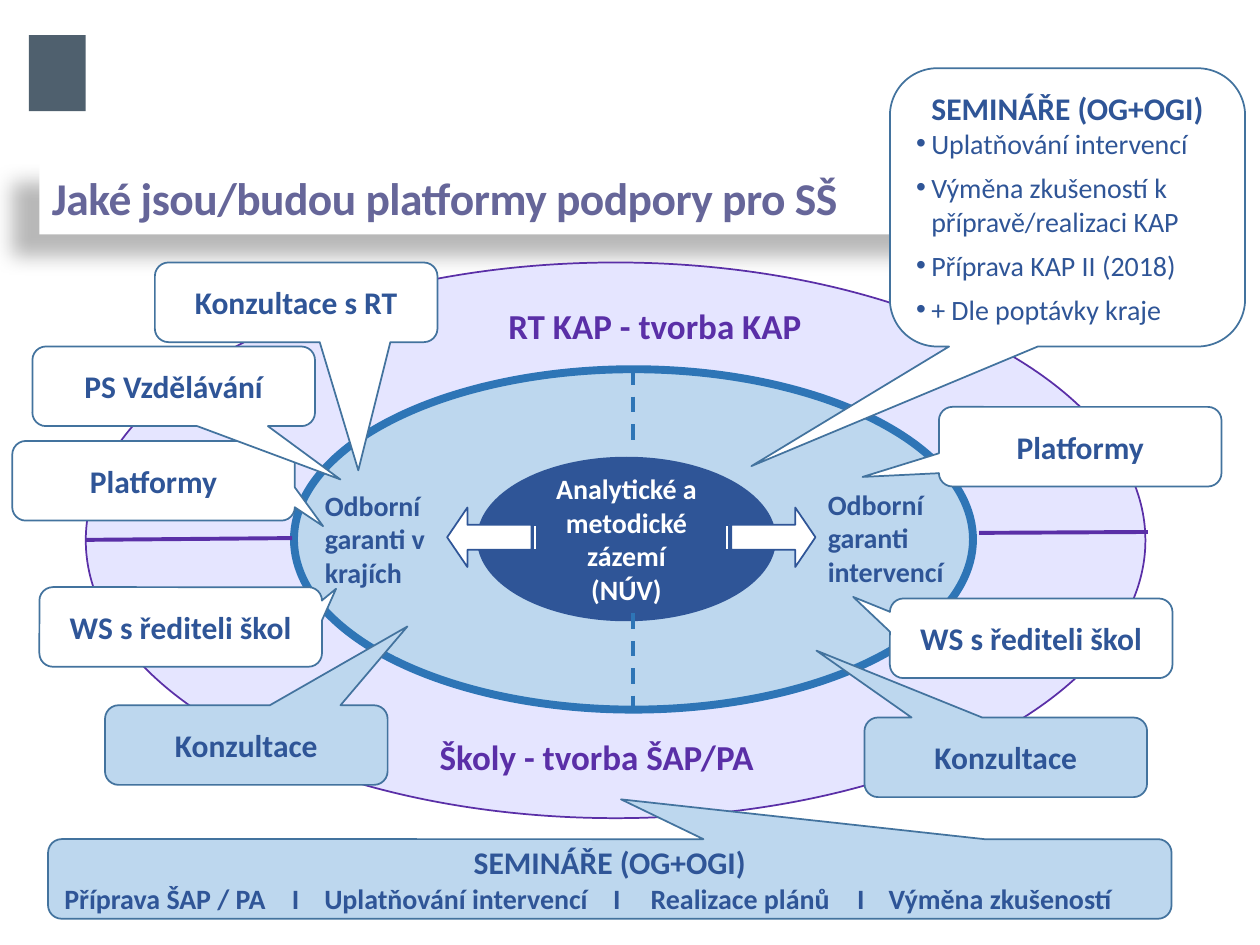
from lxml.etree import SubElement
from pptx import Presentation
from pptx.dml.color import RGBColor
from pptx.enum.dml import MSO_LINE
from pptx.enum.shapes import MSO_CONNECTOR, MSO_SHAPE
from pptx.enum.text import MSO_ANCHOR, MSO_AUTO_SIZE, PP_ALIGN
from pptx.oxml.ns import qn
from pptx.util import Pt

COLORS = {
    "white": "FFFFFF",
    "title": "666699",
    "logo": "4F606E",
    "lavender": "E5E5FF",
    "violet": "5A2FA7",
    "sky": "BDD7EE",
    "ring": "2E75B6",
    "navy": "2F5597",
    "border": "43739E",
    "shadow": "000000",
}
FONT = "Calibri"
CALLOUT_SIZE = (161.5, 45.5)
CALLOUTS = [
    ("WS s řediteli škol", 22.5, 335.5, 0.55, -0.48, "white"),
    ("Konzultace", 60, 403, 0.57, -1.49, "sky"),
    ("WS s řediteli škol", 508.5, 342, -0.63, -0.52, "white"),
    ("Konzultace", 494, 410, -0.67, -1.34, "sky"),
    ("Platformy", 7, 252, 0.6, 0.57, "white"),
    ("Platformy", 536.5, 232.5, -0.77, 0.38, "white"),
    ("PS Vzdělávání", 18.5, 198, 0.59, 1.17, "white"),
    ("Konzultace s RT", 88.5, 150, 0.22, 2.11, "white"),
]
LABELS = [
    ("Odborní garanti v krajích", (178.5, 275.5, 85, 65.5), 16, "navy", PP_ALIGN.LEFT),
    ("Odborní garanti intervencí", (466, 275, 85, 65.5), 16, "navy", PP_ALIGN.LEFT),
    ("RT KAP - tvorba KAP", (280, 170.5, 188.5, 31.5), 20, "violet", PP_ALIGN.CENTER),
    ("Školy - tvorba ŠAP/PA", (239, 417, 204, 31.5), 20, "violet", PP_ALIGN.CENTER),
]
LINES = [
    ((361.5, 211), (361.5, 256.5), "ring", MSO_LINE.DASH),
    ((361.5, 350.5), (361.5, 405.5), "ring", MSO_LINE.DASH),
    ((49, 308.5), (167, 307.5), "violet", None),
    ((559.5, 304.5), (656, 304), "violet", None),
]
SEMINAR_TITLE = "SEMINÁŘE (OG+OGI)"
SEMINAR_TOPICS = [
    "Uplatňování intervencí",
    "Výměna zkušeností k přípravě/realizaci KAP",
    "Příprava KAP II (2018)",
    "+ Dle poptávky kraje",
]
SCHOOL_TOPICS = [
    "Příprava ŠAP / PA",
    "Uplatňování intervencí",
    "Realizace plánů",
    "Výměna zkušeností",
]
SCHOOL_TABS = [130, 148.5, 313.5, 335, 453, 471]


def color(name):
    return RGBColor.from_string(COLORS[name])


def lengths(values):
    return [Pt(value) for value in values]


def format_text(para, size, color_name, align, bold=True):
    para.alignment = align
    for span in para.runs:
        span.font.name = FONT
        span.font.size = Pt(size)
        span.font.bold = bold
        span.font.color.rgb = color(color_name)


def write(box, text, size, color_name, align=PP_ALIGN.CENTER):
    frame = box.text_frame
    frame.word_wrap = True
    frame.text = text
    for para in frame.paragraphs:
        format_text(para, size, color_name, align)


def add_box(page, kind, bounds, fill, line=None, width=1, adjustments=()):
    box = page.shapes.add_shape(kind, *lengths(bounds))
    box.shadow.inherit = False
    box.fill.solid()
    box.fill.fore_color.rgb = color(fill)
    if line:
        box.line.color.rgb = color(line)
        box.line.width = Pt(width)
    else:
        box.line.fill.background()
    for index, value in enumerate(adjustments):
        box.adjustments[index] = value
    box.text_frame.vertical_anchor = MSO_ANCHOR.MIDDLE
    return box


def add_callout(page, text, bounds, tip, fill):
    box = add_box(page, MSO_SHAPE.ROUNDED_RECTANGULAR_CALLOUT, bounds, fill, "border",
                  adjustments=(*tip, 0.17))
    write(box, text, 18, "navy")
    return box


def add_label(page, text, bounds, size, color_name, align):
    box = page.shapes.add_textbox(*lengths(bounds))
    write(box, text, size, color_name, align)


def add_line(page, start, end, color_name, dash):
    line = page.shapes.add_connector(MSO_CONNECTOR.STRAIGHT, *lengths(start + end))
    line.line.color.rgb = color(color_name)
    line.line.width = Pt(2.25)
    if dash:
        line.line.dash_style = dash
    SubElement(line._element.spPr, qn("a:effectLst"))


def add_shadow(box):
    effects = SubElement(box._element.spPr, qn("a:effectLst"))
    shadow = SubElement(effects, qn("a:outerShdw"), blurRad=str(Pt(11.8)),
                        dist=str(Pt(19.7)), dir=str(141 * 60000), algn="ctr", rotWithShape="0")
    tint = SubElement(shadow, qn("a:srgbClr"), val=COLORS["shadow"])
    SubElement(tint, qn("a:alpha"), val="28000")


def set_title(page):
    title = page.shapes.title
    title.left, title.top, title.width, title.height = lengths((22.5, 91.5, 677.5, 42.5))
    title.fill.solid()
    title.fill.fore_color.rgb = color("white")
    add_shadow(title)
    write(title, "Jaké jsou/budou platformy podpory pro SŠ", 26, "title", PP_ALIGN.LEFT)
    title.text_frame.auto_size = MSO_AUTO_SIZE.NONE
    title.text_frame.vertical_anchor = MSO_ANCHOR.MIDDLE
    for span in title.text_frame.paragraphs[0].runs:
        span.font._element.set("spc", "-30")


def add_bullets(box, items):
    for item in items:
        para = box.text_frame.add_paragraph()
        para.text = item
        para.space_after = Pt(6)
        format_text(para, 16, "navy", PP_ALIGN.LEFT, bold=False)
        properties = para._p.get_or_add_pPr()
        properties.set("marL", str(Pt(8.64)))
        properties.set("indent", str(Pt(-11.5)))
        SubElement(properties, qn("a:buFont"), typeface="Arial")
        SubElement(properties, qn("a:buChar"), char="•")


def add_tabbed_row(box, items, stops):
    para = box.text_frame.add_paragraph()
    para.text = "\tI\t".join(items)
    para.space_after = Pt(6)
    format_text(para, 16, "navy", PP_ALIGN.LEFT)
    tabs = SubElement(para._p.get_or_add_pPr(), qn("a:tabLst"))
    for stop in stops:
        SubElement(tabs, qn("a:tab"), pos=str(Pt(stop)), algn="l")


def add_ellipses(page):
    add_box(page, MSO_SHAPE.OVAL, (49, 150, 605.5, 317.5), "lavender", "violet")
    add_box(page, MSO_SHAPE.OVAL, (168, 211, 388, 194.5), "sky", "ring", 4.5)
    core = add_box(page, MSO_SHAPE.OVAL, (273, 261.5, 170, 93), "navy", "navy")
    write(core, "Analytické a metodické zázemí\n(NÚV)", 16, "white")


def add_arrows(page):
    for left, rotation in ((255.5, 180), (412.5, 0)):
        arrow = add_box(page, MSO_SHAPE.STRIPED_RIGHT_ARROW, (left, 290, 53.5, 34),
                        "white", "navy", adjustments=(0.42, 0.34))
        arrow.rotation = rotation


def main():
    deck = Presentation()
    deck.slide_width, deck.slide_height = Pt(720), Pt(540)
    page = deck.slides.add_slide(deck.slide_layouts[5])
    set_title(page)
    add_box(page, MSO_SHAPE.RECTANGLE, (16.5, 20, 32.5, 43.5), "logo")
    add_ellipses(page)
    for line in LINES:
        add_line(page, *line)
    for label in LABELS:
        add_label(page, *label)
    add_arrows(page)
    schools = add_callout(page, SEMINAR_TITLE, (27.5, 479.5, 642, 45.5), (0.01, -1), "sky")
    add_tabbed_row(schools, SCHOOL_TOPICS, SCHOOL_TABS)
    seminars = add_callout(page, SEMINAR_TITLE, (508.5, 39, 203, 159), (-0.89, 0.93), "white")
    add_bullets(seminars, SEMINAR_TOPICS)
    for text, left, top, tip_x, tip_y, fill in CALLOUTS:
        add_callout(page, text, (left, top, *CALLOUT_SIZE), (tip_x, tip_y), fill)
    deck.save("out.pptx")


if __name__ == "__main__":
    main()
